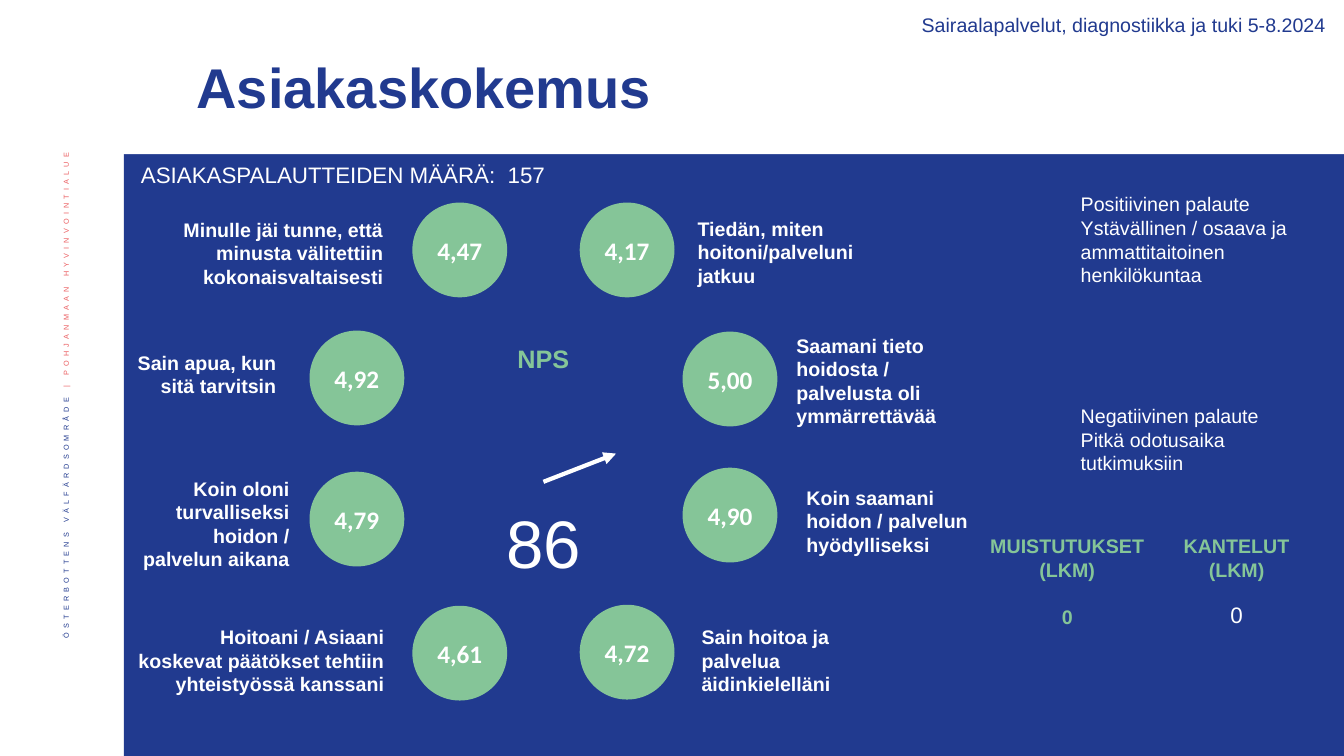
"""Build the customer experience summary slide."""
from dataclasses import dataclass

from lxml import etree
from pptx import Presentation
from pptx.dml.color import RGBColor
from pptx.enum.shapes import MSO_CONNECTOR, MSO_SHAPE
from pptx.enum.text import MSO_ANCHOR, MSO_AUTO_SIZE, PP_ALIGN
from pptx.oxml.ns import qn
from pptx.shapes.autoshape import Shape
from pptx.slide import Slide
from pptx.text.text import Font
from pptx.util import Inches, Pt

LEFT, CENTER, RIGHT = PP_ALIGN.LEFT, PP_ALIGN.CENTER, PP_ALIGN.RIGHT
MIDDLE = MSO_ANCHOR.MIDDLE
GROW, FIXED = MSO_AUTO_SIZE.SHAPE_TO_FIT_TEXT, MSO_AUTO_SIZE.NONE
RECTANGLE, OVAL = MSO_SHAPE.RECTANGLE, MSO_SHAPE.OVAL
STRAIGHT = MSO_CONNECTOR.STRAIGHT


@dataclass(frozen=True)
class Theme:
    blue: str = "213A8F"
    green: str = "85C598"
    coral: str = "EB5C5F"
    white: str = "FFFFFF"
    font: str = "Arial"
    score_font: str = "Calibri"
    strip: int = 9
    body: int = 14
    count: int = 16
    accent: int = 18
    title: int = 40
    nps: int = 48


THEME = Theme()
CIRCLE_SIZE = 0.94


@dataclass(frozen=True)
class Area:
    left: float
    top: float
    width: float
    height: float


@dataclass(frozen=True)
class Note:
    area: Area
    lines: tuple[str, ...]
    size: int = THEME.body
    color: str = THEME.white
    bold: bool = False
    align: PP_ALIGN = LEFT
    gaps: tuple[int, ...] = ()


@dataclass(frozen=True)
class Rating:
    score: str
    circle_left: float
    circle_top: float
    label: str
    area: Area
    align: PP_ALIGN


RATINGS = (
    Rating("4,47", 4.09, 2.01, "Minulle jäi tunne, että minusta välitettiin kokonaisvaltaisesti",
           Area(1.61, 2.11, 2.29, 0.81), RIGHT),
    Rating("4,92", 3.07, 3.28, "Sain apua, kun sitä tarvitsin", Area(1.23, 3.43, 1.61, 0.57), RIGHT),
    Rating("4,79", 3.07, 4.68, "Koin oloni turvalliseksi hoidon / palvelun aikana",
           Area(1.23, 4.68, 1.74, 1.04), RIGHT),
    Rating("4,61", 4.09, 6.01, "Hoitoani / Asiaani koskevat päätökset tehtiin yhteistyössä kanssani",
           Area(1.23, 6.15, 2.68, 0.81), RIGHT),
    Rating("4,17", 5.75, 2.01, "Tiedän, miten hoitoni/palveluni jatkuu", Area(6.82, 2.1, 1.92, 0.81), LEFT),
    Rating("5,00", 6.77, 3.29, "Saamani tieto hoidosta / palvelusta oli ymmärrettävää",
           Area(7.8, 3.26, 1.92, 1.04), LEFT),
    Rating("4,90", 6.77, 4.64, "Koin saamani hoidon / palvelun hyödylliseksi",
           Area(7.9, 4.77, 2.01, 0.81), LEFT),
    Rating("4,72", 5.75, 6.0, "Sain hoitoa ja palvelua äidinkielelläni", Area(6.86, 6.15, 1.85, 0.81), LEFT),
)

NOTES = (
    Note(Area(5.01, 3.36, 0.76, 0.4), ("NPS",), THEME.accent, THEME.green, True, CENTER),
    Note(Area(1.3, 1.55, 4.7, 0.37), ("ASIAKASPALAUTTEIDEN MÄÄRÄ:  157",), THEME.count),
    Note(Area(4.39, 4.92, 2.01, 0.91), ("86",), THEME.nps, align=CENTER),
    Note(Area(10.62, 1.86, 2.55, 2.93),
         ("Positiivinen palaute", "Ystävällinen / osaava ja ammattitaitoinen henkilökuntaa",
          "Negatiivinen palaute", "Pitkä odotusaika tutkimuksiin"), gaps=(0, 0, 84, 0)),
    Note(Area(9.67, 5.25, 1.83, 1.04), ("MUISTUTUKSET (LKM)", "0"),
         color=THEME.green, bold=True, align=CENTER, gaps=(0, 17)),
    Note(Area(11.35, 5.25, 1.83, 0.57), ("KANTELUT (LKM)",), color=THEME.green, bold=True, align=CENTER),
    Note(Area(11.5, 5.91, 1.53, 0.37), ("0",), THEME.count, align=CENTER),
    Note(Area(7.3, 0.08, 5.95, 0.34), ("Sairaalapalvelut, diagnostiikka ja tuki 5-8.2024",),
         color=THEME.blue, align=RIGHT),
)


def bounds(area: Area) -> tuple[Inches, ...]:
    """Convert an area to slide lengths."""
    return tuple(Inches(value) for value in (area.left, area.top, area.width, area.height))


def style_font(font: Font, size: int, color: str, bold: bool = False, name: str = THEME.font) -> None:
    """Apply typeface, size, weight and colour."""
    font.name, font.size, font.bold = name, Pt(size), bold
    font.color.rgb = RGBColor.from_string(color)


def add_block(page: Slide, kind: MSO_SHAPE, area: Area, color: str) -> Shape:
    """Add a plain filled shape."""
    block = page.shapes.add_shape(kind, *bounds(area))
    block.shadow.inherit = False
    block.fill.solid()
    block.fill.fore_color.rgb = RGBColor.from_string(color)
    block.line.fill.background()
    return block


def add_note(page: Slide, note: Note) -> None:
    """Add a wrapped text box with uniform type."""
    frame = page.shapes.add_textbox(*bounds(note.area)).text_frame
    frame.word_wrap = True
    frame.auto_size = GROW
    frame.text = "\n".join(note.lines)
    for para in frame.paragraphs:
        para.alignment = note.align
        style_font(para.font, note.size, note.color, note.bold)
    for para, gap in zip(frame.paragraphs, note.gaps):
        if gap:
            para.space_before = Pt(gap)


def add_rating(page: Slide, rating: Rating) -> None:
    """Add a question label and its score circle."""
    add_note(page, Note(rating.area, (rating.label,), bold=True, align=rating.align))
    area = Area(rating.circle_left, rating.circle_top, CIRCLE_SIZE, CIRCLE_SIZE)
    frame = add_block(page, OVAL, area, THEME.green).text_frame
    frame.word_wrap = False
    frame.vertical_anchor = MIDDLE
    frame.text = rating.score
    para = frame.paragraphs[0]
    para.alignment = CENTER
    style_font(para.font, THEME.accent, THEME.white, True, THEME.score_font)


def add_strip(page: Slide) -> None:
    """Add the bilingual organisation name running up the left margin."""
    frame = page.shapes.add_textbox(*bounds(Area(0.42, 1.42, 0.52, 5.73))).text_frame
    frame.word_wrap = True
    frame.vertical_anchor = MIDDLE
    frame._bodyPr.set("vert", "vert270")
    para = frame.paragraphs[0]
    para.alignment, para.line_spacing = RIGHT, 0.9
    for text, color in (("ÖSTERBOTTENS VÄLFÄRDSOMRÅDE ", THEME.blue),
                        ("| POHJANMAAN HYVINVOINTIALUE", THEME.coral)):
        span = para.add_run()
        span.text = text
        style_font(span.font, THEME.strip, color)
        properties = span._r.get_or_add_rPr()
        properties.set("baseline", "30000")
        properties.set("spc", "300")


def add_trend_arrow(page: Slide) -> None:
    """Add the rising arrow above the NPS figure."""
    ends = (Inches(value) for value in (5.39, 4.78, 6.11, 4.5))
    arrow = page.shapes.add_connector(STRAIGHT, *ends)
    arrow.line.color.rgb = RGBColor.from_string(THEME.white)
    arrow.line.width = Pt(3)
    etree.SubElement(arrow.line._get_or_add_ln(), qn("a:tailEnd"), type="triangle")
    etree.SubElement(arrow.element.spPr, qn("a:effectLst"))


def place_title(page: Slide, band: Shape) -> None:
    """Format the title and bring it in front of the header band."""
    title = page.shapes.title
    title.left, title.top, title.width, title.height = bounds(Area(1.85, 0.47, 10.2, 0.85))
    frame = title.text_frame
    frame.text = "Asiakaskokemus"
    frame.auto_size, frame.vertical_anchor = FIXED, MIDDLE
    para = frame.paragraphs[0]
    para.alignment, para.line_spacing = LEFT, 0.9
    style_font(para.font, THEME.title, THEME.blue, True)
    band.element.addnext(title.element)


def main() -> None:
    """Create and save the deck."""
    deck = Presentation()
    deck.slide_width, deck.slide_height = Inches(13.33), Inches(7.5)
    page = deck.slides.add_slide(deck.slide_layouts[5])
    add_strip(page)
    add_block(page, RECTANGLE, Area(1.23, 0, 12.1, 7.5), THEME.blue)
    band = add_block(page, RECTANGLE, Area(1.15, 0, 12.18, 1.53), THEME.white)
    place_title(page, band)
    for note in NOTES:
        add_note(page, note)
    add_trend_arrow(page)
    for rating in RATINGS:
        add_rating(page, rating)
    deck.save("out.pptx")


if __name__ == "__main__":
    main()
